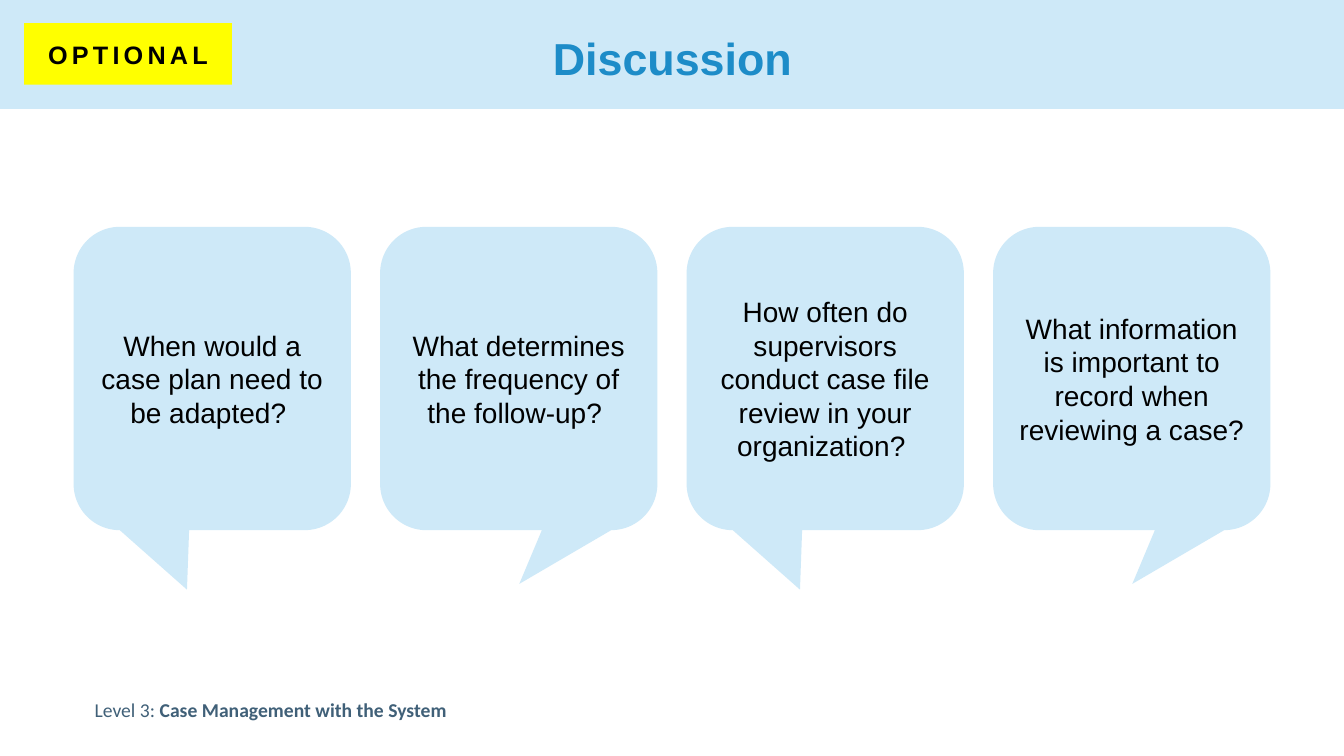
from pptx import Presentation
from pptx.dml.color import RGBColor
from pptx.enum.shapes import MSO_SHAPE
from pptx.enum.text import MSO_ANCHOR, MSO_AUTO_SIZE, PP_ALIGN
from pptx.util import Inches, Pt

PALE_BLUE = RGBColor(0xCE, 0xE9, 0xF8)
TITLE_BLUE = RGBColor(0x1D, 0x8C, 0xC8)
SLATE = RGBColor(0x40, 0x60, 0x78)
YELLOW = RGBColor(0xFF, 0xFF, 0x00)
BLACK = RGBColor(0x00, 0x00, 0x00)

SLIDE_WIDTH, SLIDE_HEIGHT = 13.33, 7.5
HEADER_HEIGHT = 1.08
CALLOUT_PITCH, CALLOUT_WIDTH = 3.04, 2.75
TAILS = [(-0.091, 0.696, 0.167), (0.002, 0.677, 0.167)]

TITLE_FONT = {"name": "Arial", "size": Pt(32), "bold": True, "color": TITLE_BLUE}
QUESTION_FONT = {"name": "Arial", "size": Pt(20), "bold": False, "color": BLACK}
BADGE_FONT = {"name": "Arial", "size": Pt(18), "bold": True, "color": BLACK}
FOOTER_FONT = {"name": "Calibri", "size": Pt(14), "bold": False, "color": SLATE}

QUESTIONS = [
    "When would a case plan need to be adapted? ",
    "What determines the frequency of the follow-up? ",
    "How often do supervisors conduct case file review in your organization? ",
    "What information is important to record when reviewing a case? ",
]


def add_run(paragraph, text, font_format):
    run = paragraph.add_run()
    run.text = text
    for name, value in font_format.items():
        if name == "color":
            run.font.color.rgb = value
        else:
            setattr(run.font, name, value)
    return run


def add_centred_text(shape, text, font_format):
    frame_format = {"word_wrap": True, "vertical_anchor": MSO_ANCHOR.MIDDLE}
    for name, value in frame_format.items():
        setattr(shape.text_frame, name, value)
    paragraph = shape.text_frame.paragraphs[0]
    paragraph.alignment = PP_ALIGN.CENTER
    return add_run(paragraph, text, font_format)


def add_filled_shape(slide, kind, box, color):
    shape = slide.shapes.add_shape(kind, *map(Inches, box))
    shape.shadow.inherit = False
    shape.fill.solid()
    shape.fill.fore_color.rgb = color
    shape.line.fill.background()
    return shape


def add_header(slide, box):
    left, top, width, height = box
    band = add_filled_shape(slide, MSO_SHAPE.RECTANGLE, box, PALE_BLUE)
    title = slide.shapes.title
    band.element.addnext(title.element)
    title_box = {"left": left + 0.92, "top": top + 0.13, "width": width - 1.83, "height": height - 0.13}
    for name, value in title_box.items():
        setattr(title, name, Inches(value))
    title.text_frame.auto_size = MSO_AUTO_SIZE.NONE
    add_centred_text(title, "Discussion", TITLE_FONT)
    title.text_frame.paragraphs[0].line_spacing = 0.9


def add_badge(slide, box):
    badge = add_filled_shape(slide, MSO_SHAPE.RECTANGLE, box, YELLOW)
    run = add_centred_text(badge, "OPTIONAL", BADGE_FONT)
    run._r.get_or_add_rPr().set("spc", "300")


def add_questions(slide, box):
    left, top, pitch, height = box
    for column, question in enumerate(QUESTIONS):
        callout_box = (left + column * pitch, top, CALLOUT_WIDTH, height)
        callout = add_filled_shape(slide, MSO_SHAPE.ROUNDED_RECTANGULAR_CALLOUT, callout_box, PALE_BLUE)
        for index, value in enumerate(TAILS[column % len(TAILS)]):
            callout.adjustments[index] = value
        add_centred_text(callout, question, QUESTION_FONT)


def add_footer(slide, box):
    footer = slide.shapes.add_textbox(*map(Inches, box))
    footer.text_frame.word_wrap = True
    paragraph = footer.text_frame.paragraphs[0]
    add_run(paragraph, "Level 3: ", FOOTER_FONT)
    add_run(paragraph, "Case Management with the System", {**FOOTER_FONT, "bold": True})


def main():
    presentation = Presentation()
    presentation.slide_width = Inches(SLIDE_WIDTH)
    presentation.slide_height = Inches(SLIDE_HEIGHT)
    slide = presentation.slides.add_slide(presentation.slide_layouts.get_by_name("Title Only"))
    add_header(slide, (0, 0, SLIDE_WIDTH, HEADER_HEIGHT))
    add_footer(slide, (0.84, 6.87, 4.55, 0.34))
    add_questions(slide, (0.73, 2.25, CALLOUT_PITCH, 3.01))
    add_badge(slide, (0.24, 0.23, 2.06, 0.61))
    presentation.save("out.pptx")


if __name__ == "__main__":
    main()
